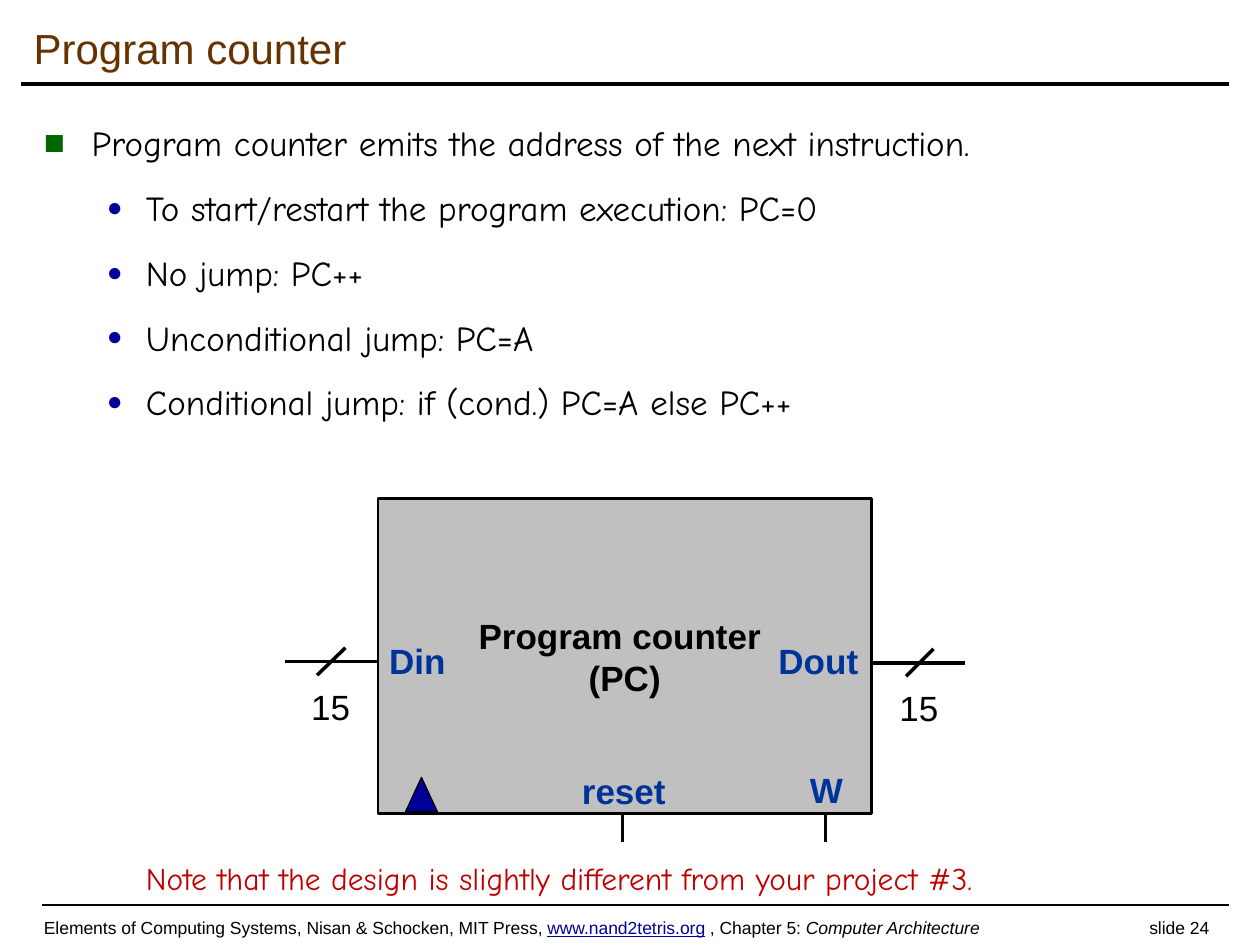
from lxml.etree import SubElement
from pptx import Presentation
from pptx.dml.color import RGBColor
from pptx.enum.shapes import MSO_CONNECTOR, MSO_SHAPE
from pptx.enum.text import MSO_ANCHOR, PP_ALIGN
from pptx.oxml.ns import qn
from pptx.util import Inches, Pt

theme = {
    "font": "Arial", "hand": "Comic Neue",
    "black": "000000", "title": "663300", "navy": "000099", "port": "003399",
    "green": "006600", "gray": "C0C0C0", "red": "C00000",
    "head": 24, "text": 20, "note": 18, "foot": 10,
}

deck = Presentation()
deck.slide_width, deck.slide_height = Inches(10), Inches(7.5)
col, row = deck.slide_width / 120, deck.slide_height / 90
slide = deck.slides.add_slide(deck.slide_layouts[5])
shapes = slide.shapes


def style(font, size, color, face="font", bold=False):
    font.size, font.name, font.bold = Pt(theme[size]), theme[face], bold
    font.color.rgb = RGBColor.from_string(theme[color])


def place(x, y, w, h):
    return int(x * col), int(y * row), int(w * col), int(h * row)


title = shapes.title
title.left, title.top, title.width, title.height = place(2, 1, 115, 7)
title.text_frame.text = "Program counter"
title.text_frame.vertical_anchor = MSO_ANCHOR.MIDDLE
title.text_frame.paragraphs[0].alignment = PP_ALIGN.LEFT
style(title.text_frame.paragraphs[0].runs[0].font, "head", "title")

points = [
    (0, "Program counter emits the address of the next instruction."),
    (1, "To start/restart the program execution: PC=0"),
    (1, "No jump: PC++"),
    (1, "Unconditional jump: PC=A"),
    (1, "Conditional jump: if (cond.) PC=A else PC++"),
]
marks = [("■", "green", 100, 0.38, 0.38), ("●", "navy", 75, 0.81, 0.31)]
body = shapes.add_textbox(*place(3, 11, 113, 73)).text_frame
body.word_wrap = True
for i, (level, words) in enumerate(points):
    para = body.paragraphs[0] if i == 0 else body.add_paragraph()
    para.text, para.level = words, level
    if i:
        para.space_before = Pt(13)
    mark, color, scale, left, hang = marks[level]
    props = para._p.get_or_add_pPr()
    props.set("marL", str(Inches(left)))
    props.set("indent", str(-Inches(hang)))
    SubElement(SubElement(props, qn("a:buClr")), qn("a:srgbClr"), val=theme[color])
    SubElement(props, qn("a:buSzPct"), val=str(scale * 1000))
    SubElement(props, qn("a:buFont"), typeface=theme["font"])
    SubElement(props, qn("a:buChar"), char=mark)
    style(para.runs[0].font, "text", "black", "hand")

solids = [
    (MSO_SHAPE.RECTANGLE, (36, 47.5, 47, 30), "gray", 1.5),
    (MSO_SHAPE.ISOSCELES_TRIANGLE, (38.64, 74.04, 3, 3.24), "navy", 0.75),
]
for kind, box, color, width in solids:
    solid = shapes.add_shape(kind, *place(*box))
    solid.shadow.inherit = False
    solid.fill.solid()
    solid.fill.fore_color.rgb = RGBColor.from_string(theme[color])
    solid.line.color.rgb = RGBColor.from_string(theme["black"])
    solid.line.width = Pt(width)
    if color == "gray":
        frame = solid.text_frame
        frame.word_wrap = False
        frame.vertical_anchor = MSO_ANCHOR.MIDDLE
        frame.text = "Program counter \n(PC)"
        for para in frame.paragraphs:
            para.alignment = PP_ALIGN.CENTER
            style(para.runs[0].font, "text", "black", bold=True)

lines = [
    (2, 8, 117, 8, 2),
    (4, 86.2, 117, 86.2, 1),
    (27.1, 63, 36, 63, 2.25),
    (83.1, 63.1, 91.9, 63.1, 2.25),
    (32.9, 61.7, 30.2, 64.3, 2),
    (88.9, 61.8, 86.3, 64.4, 2),
    (59.3, 77.4, 59.3, 80.2, 1.75),
    (78.6, 77.3, 78.6, 80.2, 1.75),
]
for x, y, right, low, width in lines:
    line = shapes.add_connector(MSO_CONNECTOR.STRAIGHT, *place(x, y, right, low))
    line.line.color.rgb = RGBColor.from_string(theme["black"])
    line.line.width = Pt(width)
    SubElement(line._element.spPr, qn("a:effectLst"))

labels = [
    ("reset", (54.24, 72.72, 10.44, 5.28), "text", "port", "font", True),
    ("W", (75.96, 72.6, 5.64, 5.28), "text", "port", "font", True),
    ("Din", (35.88, 60.36, 7.92, 5.28), "text", "port", "font", True),
    ("Dout", (72.96, 60.36, 10.08, 5.28), "text", "port", "font", True),
    ("15", (28.44, 64.68, 6.12, 5.28), "text", "black", "font", False),
    ("15", (84.48, 64.8, 6.12, 5.28), "text", "black", "font", False),
    ("Note that the design is slightly different from your project #3.",
     (12.72, 81.24, 93.48, 4.8), "note", "red", "hand", False),
]
for words, box, *look in labels:
    frame = shapes.add_textbox(*place(*box)).text_frame
    frame.word_wrap = False
    frame.text = words
    style(frame.paragraphs[0].runs[0].font, *look)

foot = shapes.add_textbox(*place(3, 86.76, 114, 3.24)).text_frame
foot.word_wrap = True
foot.vertical_anchor = MSO_ANCHOR.MIDDLE
foot.margin_top = foot.margin_bottom = 0
para = foot.paragraphs[0]
tabs = SubElement(para._p.get_or_add_pPr(), qn("a:tabLst"))
SubElement(tabs, qn("a:tab"), pos=str(Inches(9.25)), algn="r")
parts = [
    ("Elements of Computing Systems, Nisan & Schocken, MIT Press, ", "black"),
    ("www.nand2tetris.org", "navy"),
    (" , Chapter 5: ", "black"),
    ("Computer Architecture", "black"),
    ("\tslide 24", "black"),
]
for words, color in parts:
    run = para.add_run()
    run.text = words
    style(run.font, "foot", color)
    run.font.underline = color == "navy"
    run.font.italic = words == "Computer Architecture"

deck.save("out.pptx")
